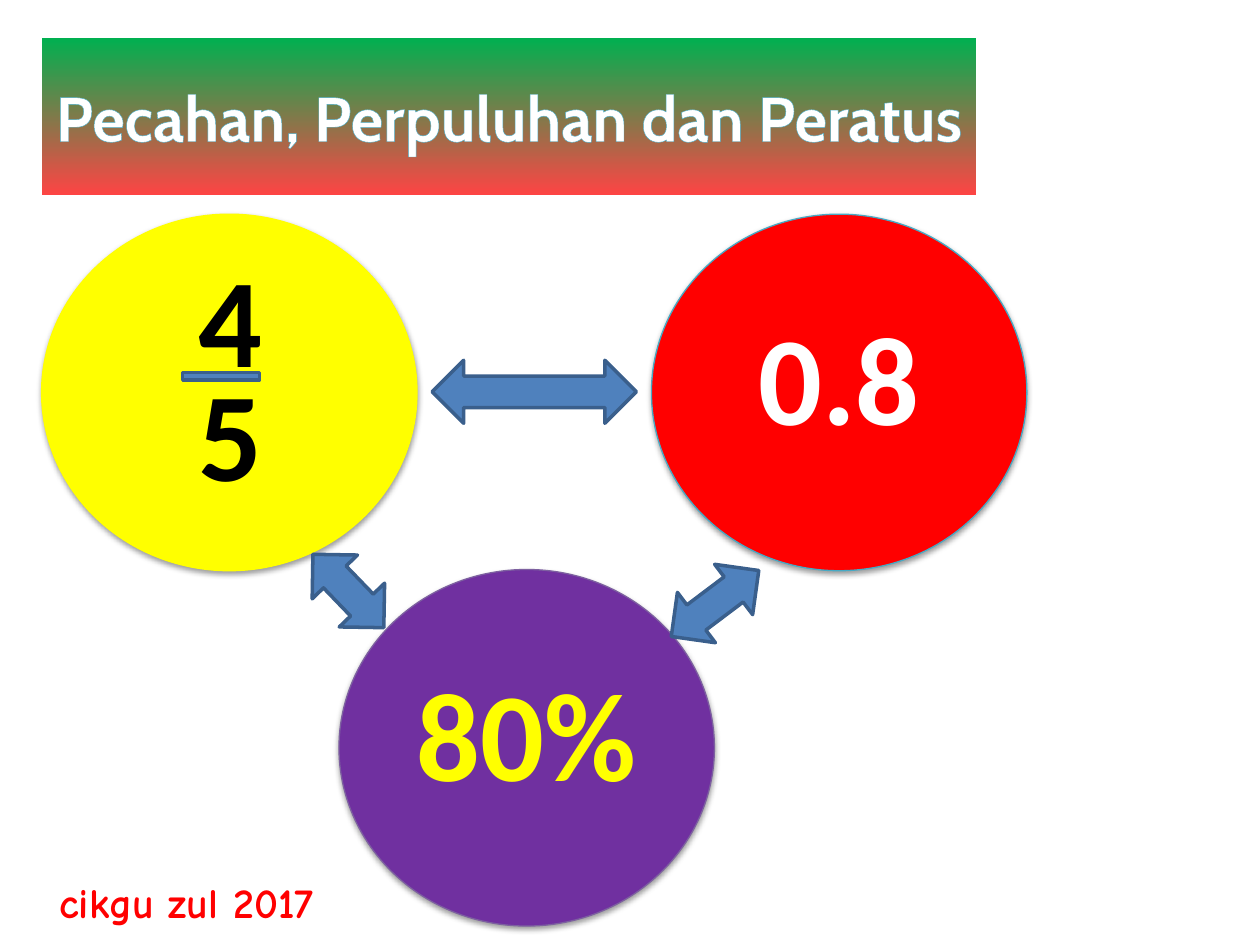
"""Build a slide linking a fraction, a decimal and a percentage."""
from typing import NamedTuple

from lxml import etree
from pptx import Presentation
from pptx.dml.color import RGBColor
from pptx.enum.shapes import MSO_SHAPE
from pptx.enum.text import MSO_ANCHOR, MSO_AUTO_SIZE, PP_ALIGN
from pptx.oxml import parse_xml
from pptx.oxml.ns import nsdecls, qn
from pptx.util import Inches, Pt

OVAL = MSO_SHAPE.OVAL
ARROW = MSO_SHAPE.LEFT_RIGHT_ARROW
MINUS = MSO_SHAPE.MATH_MINUS
CENTER = PP_ALIGN.CENTER
MIDDLE = MSO_ANCHOR.MIDDLE
FIT = MSO_AUTO_SIZE.SHAPE_TO_FIT_TEXT
FIXED = MSO_AUTO_SIZE.NONE

BLACK = RGBColor(0x00, 0x00, 0x00)
WHITE = RGBColor(0xFF, 0xFF, 0xFF)
RED = RGBColor(0xFF, 0x00, 0x00)
CORAL = RGBColor(0xFE, 0x44, 0x44)
GREEN = RGBColor(0x00, 0xB0, 0x50)
YELLOW = RGBColor(0xFF, 0xFF, 0x00)
PURPLE = RGBColor(0x70, 0x30, 0xA0)
MAUVE = RGBColor(0x7D, 0x60, 0xA0)
TEAL = RGBColor(0x46, 0xAA, 0xC5)
AQUA = RGBColor(0x4B, 0xAC, 0xC6)
BLUE = RGBColor(0x4F, 0x81, 0xBD)
NAVY = RGBColor(0x3A, 0x5F, 0x8C)

WIDE, HIGH = Inches(10), Inches(7.5)
COLS, ROWS = 100, 75
DISC_W, DISC_H = 29.8, 28.3


class Box(NamedTuple):
    """A place on the grid, in columns and rows."""
    col: float
    row: float
    wide: float
    high: float


class Disc(NamedTuple):
    """A circle that holds one form of the number."""
    col: float
    row: float
    fill: RGBColor
    edge: RGBColor


class Mark(NamedTuple):
    """A blue arrow or fraction bar."""
    kind: MSO_SHAPE
    box: Box
    turn: float = 0


class Label(NamedTuple):
    """A line of text set on the slide."""
    text: str
    box: Box
    color: RGBColor
    size: float = 72
    font: str = "Calibri"


DISCS = [
    Disc(3.3, 17, YELLOW, YELLOW),
    Disc(51.7, 17, RED, TEAL),
    Disc(26.9, 45.2, PURPLE, MAUVE),
]
MARKS = [
    Mark(ARROW, Box(34.3, 28.6, 16.2, 5)),
    Mark(ARROW, Box(52.4, 45.4, 8.7, 5), 323),
    Mark(ARROW, Box(23.6, 44.4, 8.1, 5), 226),
    Mark(MINUS, Box(13.4, 28.6, 8.3, 2.5)),
]
LABELS = [
    Label("4", Box(14.7, 18.7, 7.1, 13.1), BLACK),
    Label("5", Box(14.7, 27.7, 7.1, 13.1), BLACK),
    Label("0.8", Box(59.2, 23.3, 14.8, 13.1), WHITE),
    Label("80%", Box(32.1, 51.5, 19.4, 13.1), YELLOW),
    Label("cikgu zul 2017", Box(-0.3, 69.1, 30.2, 5.6), RED, 24, "Comic Neue"),
]


def place(box: Box) -> tuple[int, int, int, int]:
    """Turn grid units into slide lengths."""
    return (int(box.col * WIDE / COLS), int(box.row * HIGH / ROWS),
            int(box.wide * WIDE / COLS), int(box.high * HIGH / ROWS))


def write(frame, text: str, *, size: float, font: str, color: RGBColor,
          wrap: bool = False, fit=FIT):
    """Put one bold centred run in a frame and return it."""
    frame.word_wrap = wrap
    frame.auto_size = fit
    para = frame.paragraphs[0]
    para.alignment = CENTER
    run = para.add_run()
    run.text = text
    run.font.size = Pt(size)
    run.font.name = font
    run.font.bold = True
    run.font.color.rgb = color
    return run


def draw(slide, kind: MSO_SHAPE, box: Box, fill: RGBColor, edge: RGBColor,
         width: float):
    """Add a filled and outlined preset shape without a shadow."""
    shape = slide.shapes.add_shape(kind, *place(box))
    shape.shadow.inherit = False
    shape.fill.solid()
    shape.fill.fore_color.rgb = fill
    shape.line.color.rgb = edge
    shape.line.width = Pt(width)
    return shape


def shade(shape) -> None:
    """Cast a soft shadow below a shape."""
    glow = shape.element.spPr.find(qn("a:effectLst"))
    cast = etree.SubElement(glow, qn("a:outerShdw"), blurRad=str(Pt(3.1)),
                            dist=str(Pt(1.6)), dir="5400000", rotWithShape="0")
    tint = etree.SubElement(cast, qn("a:srgbClr"), val=str(BLACK))
    etree.SubElement(tint, qn("a:alpha"), val="38000")


def head(slide) -> None:
    """Format the title as a gradient banner with outlined text."""
    title = slide.shapes.title
    title.left, title.top, title.width, title.height = place(
        Box(3.3, 3, 74.2, 12.5))
    title.fill.gradient()
    title.fill.gradient_angle = 90
    for stop, color in zip(title.fill.gradient_stops, (CORAL, GREEN)):
        stop.color.rgb = color
    frame = title.text_frame
    frame.vertical_anchor = MIDDLE
    run = write(frame, "Pecahan, Perpuluhan dan Peratus", size=36,
                font="Cabin", color=WHITE, wrap=True, fit=FIXED)
    rim = parse_xml(f'<a:ln {nsdecls("a")} w="{Pt(0.8)}"><a:solidFill>'
                    f'<a:srgbClr val="{AQUA}"/></a:solidFill></a:ln>')
    run.font.fill
    run._r.get_or_add_rPr().insert(0, rim)


def main() -> None:
    """Build and save the slide."""
    deck = Presentation()
    deck.slide_width, deck.slide_height = WIDE, HIGH
    slide = deck.slides.add_slide(deck.slide_layouts[5])
    head(slide)
    for disc in DISCS:
        box = Box(disc.col, disc.row, DISC_W, DISC_H)
        shade(draw(slide, OVAL, box, disc.fill, disc.edge, 0.75))
    for mark in MARKS:
        draw(slide, mark.kind, mark.box, BLUE, NAVY, 2).rotation = mark.turn
    for label in LABELS:
        frame = slide.shapes.add_textbox(*place(label.box)).text_frame
        write(frame, label.text, size=label.size, font=label.font,
              color=label.color)
    deck.save("out.pptx")


if __name__ == "__main__":
    main()
